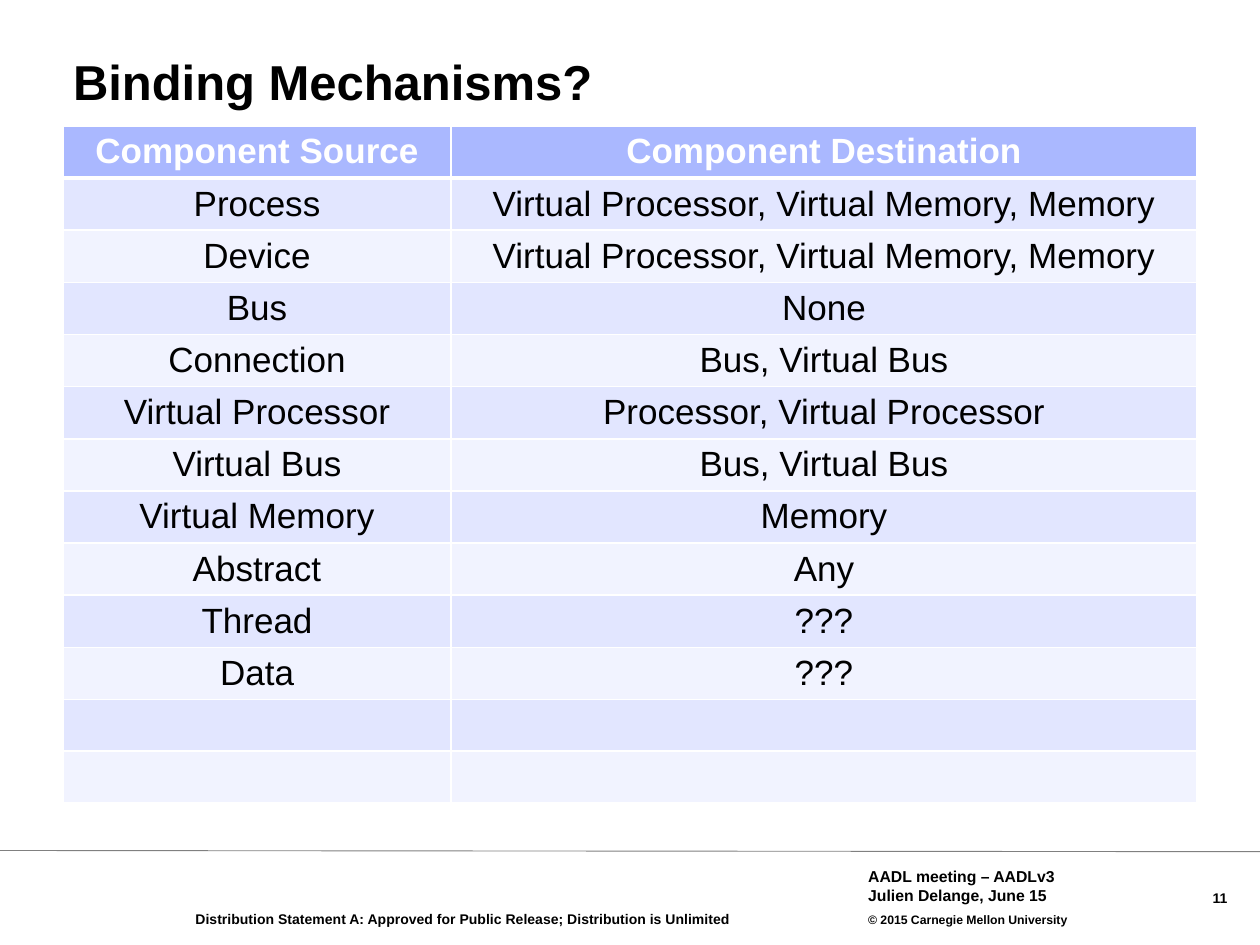
import dataclasses

import lxml.etree
import pptx
import pptx.dml.color
import pptx.enum.shapes
import pptx.enum.text
import pptx.oxml.ns
import pptx.util

ALIGN = pptx.enum.text.PP_ALIGN
ANCHOR = pptx.enum.text.MSO_ANCHOR


@dataclasses.dataclass(frozen=True)
class Theme:
    font: str = "Arial"
    ink: str = "000000"
    white: str = "FFFFFF"
    rule: str = "808080"
    header_fill: str = "AAB8FF"
    band_fills: tuple = ("E2E6FF", "F1F3FF")
    title_size: int = 28
    table_size: int = 20
    event_size: int = 9
    footer_size: int = 8
    copyright_size: int = 7


THEME = Theme()
WIDTH = pptx.util.Inches(10)
HEIGHT = pptx.util.Inches(7.5)
COLUMN_SHARES = (30.8, 59.2)
ROW_SHARE = 5.47
ROW_COUNT = 13
BINDINGS = [
    ("Component Source", "Component Destination"),
    ("Process", "Virtual Processor, Virtual Memory, Memory"),
    ("Device", "Virtual Processor, Virtual Memory, Memory"),
    ("Bus", "None"),
    ("Connection", "Bus, Virtual Bus"),
    ("Virtual Processor", "Processor, Virtual Processor"),
    ("Virtual Bus", "Bus, Virtual Bus"),
    ("Virtual Memory", "Memory"),
    ("Abstract", "Any"),
    ("Thread", "???"),
    ("Data", "???"),
]


def across(percent):
    return round(WIDTH * percent / 100)


def down(percent):
    return round(HEIGHT * percent / 100)


def color(value):
    return pptx.dml.color.RGBColor.from_string(value)


def apply_format(target, values):
    for name, value in values.items():
        setattr(target, name, value)


def write_paragraph(paragraph, text, size, ink=THEME.ink, bold=True, **layout):
    run = paragraph.add_run()
    run.text = text
    apply_format(paragraph, layout)
    apply_format(run.font, {"name": THEME.font, "size": pptx.util.Pt(size), "bold": bold})
    run.font.color.rgb = color(ink)


def add_text(slide, box, lines, insets=(0, 0, 0, 0), anchor=ANCHOR.TOP, wrap=True):
    left, top, width, height = box
    shape = slide.shapes.add_textbox(across(left), down(top), across(width), down(height))
    frame = shape.text_frame
    apply_format(frame, {"word_wrap": wrap, "vertical_anchor": anchor})
    sides = ("margin_left", "margin_top", "margin_right", "margin_bottom")
    apply_format(frame, {side: pptx.util.Inches(inset) for side, inset in zip(sides, insets)})
    for index, (text, size, layout) in enumerate(lines):
        paragraph = frame.add_paragraph() if index else frame.paragraphs[0]
        write_paragraph(paragraph, text, size, **layout)


def add_rule(slide, start, end):
    connector = slide.shapes.add_connector(
        pptx.enum.shapes.MSO_CONNECTOR.STRAIGHT,
        across(start[0]), down(start[1]), across(end[0]), down(end[1]))
    connector.line.color.rgb = color(THEME.rule)
    connector.line.width = pptx.util.Pt(0.5)
    properties = connector._element.spPr
    lxml.etree.SubElement(properties, pptx.oxml.ns.qn("a:effectLst"))


def set_borders(cell, widths):
    properties = cell._tc.get_or_add_tcPr()
    for index, (side, width) in enumerate(widths.items()):
        border = lxml.etree.Element(
            pptx.oxml.ns.qn(f"a:ln{side}"), w=str(pptx.util.Pt(width)))
        fill = lxml.etree.SubElement(border, pptx.oxml.ns.qn("a:solidFill"))
        lxml.etree.SubElement(fill, pptx.oxml.ns.qn("a:srgbClr"), val=THEME.white)
        properties.insert(index, border)


def style_cell(cell, row):
    cell.fill.solid()
    cell.fill.fore_color.rgb = color(
        THEME.band_fills[(row - 1) % 2] if row else THEME.header_fill)
    apply_format(cell, {"margin_top": pptx.util.Inches(0.05),
                        "margin_bottom": pptx.util.Inches(0.03)})
    set_borders(cell, {"L": 1, "R": 1, "T": 3 if row == 1 else 1, "B": 1 if row else 3})


def add_binding_table(slide, left, top):
    table = slide.shapes.add_table(
        ROW_COUNT, len(COLUMN_SHARES), across(left), down(top),
        across(sum(COLUMN_SHARES)), down(ROW_SHARE * ROW_COUNT)).table
    for column, share in zip(table.columns, COLUMN_SHARES):
        column.width = across(share)
    for row_index, row in enumerate(table.rows):
        row.height = down(ROW_SHARE)
        for cell in row.cells:
            style_cell(cell, row_index)
    for row_index, texts in enumerate(BINDINGS):
        is_header = row_index == 0
        for column_index, text in enumerate(texts):
            paragraph = table.cell(row_index, column_index).text_frame.paragraphs[0]
            write_paragraph(paragraph, text, THEME.table_size,
                            THEME.white if is_header else THEME.ink, is_header,
                            alignment=ALIGN.CENTER)


def add_footer(slide):
    add_rule(slide, (0, 90), (100, 90.13))
    add_text(slide, (89.2, 93.47, 9.2, 5.47),
             [("11", THEME.footer_size,
               {"alignment": ALIGN.RIGHT, "line_spacing": pptx.util.Pt(13)})],
             insets=(0, 0, 0.1, 0.05))
    add_text(slide, (68.4, 91.07, 25.8, 7.73),
             [("AADL meeting – AADLv3", THEME.event_size, {}),
              ("Julien Delange, June 15", THEME.event_size, {}),
              ("© 2015 Carnegie Mellon University", THEME.copyright_size,
               {"line_spacing": 1.5})],
             insets=(0.05,) * 4, anchor=ANCHOR.MIDDLE)
    add_text(slide, (14.3, 95.73, 44.9, 3.2),
             [("Distribution Statement A: Approved for Public Release; "
               "Distribution is Unlimited", THEME.footer_size,
               {"alignment": ALIGN.CENTER})],
             insets=(0.1, 0.05, 0.1, 0.05), wrap=False)


def main():
    presentation = pptx.Presentation()
    apply_format(presentation, {"slide_width": WIDTH, "slide_height": HEIGHT})
    slide = presentation.slides.add_slide(presentation.slide_layouts[6])
    add_footer(slide)
    add_text(slide, (5.8, 6.13, 89.2, 5.6),
             [("Binding Mechanisms?", THEME.title_size, {"line_spacing": 0.9})])
    add_binding_table(slide, 5, 13.33)
    presentation.save("out.pptx")


if __name__ == "__main__":
    main()
